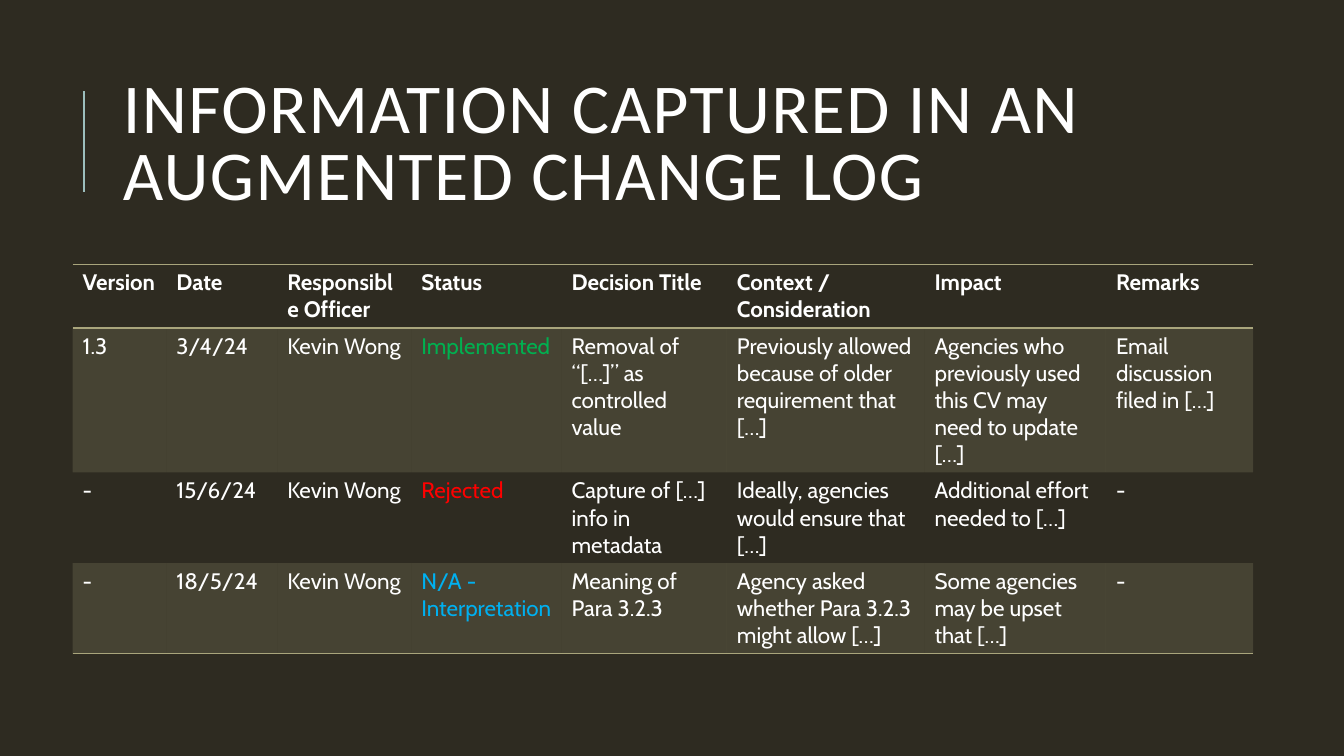
from lxml import etree
from pptx import Presentation
from pptx.dml.color import RGBColor
from pptx.enum.shapes import MSO_CONNECTOR
from pptx.enum.text import MSO_ANCHOR
from pptx.oxml.ns import qn
from pptx.util import Inches, Pt

STRAIGHT = MSO_CONNECTOR.STRAIGHT
MIDDLE = MSO_ANCHOR.MIDDLE
PLAIN_TABLE_STYLE = "{2D5ABB26-0587-4C30-8999-92F81FD0307C}"

BACKGROUND, WHITE, ACCENT, RULE = "2E2B21", "FFFFFF", "9CBEBD", "A9A57C"
BAND_OPACITY = 20
TITLE_FORMAT = {"name": "Calibri", "size": Pt(50), "bold": False}
CELL_FORMAT = {"name": "Cabin", "size": Pt(16), "bold": False}
HEADER_FORMAT = {**CELL_FORMAT, "bold": True}

TITLE = "INFORMATION CAPTURED IN AN AUGMENTED CHANGE LOG"
COLUMN_WIDTHS = [0.93, 1.1, 1.33, 1.49, 1.64, 1.96, 1.8, 1.46]
ROW_HEIGHT = 0.41
STATUS_COLORS = {
    "Implemented": "00B050",
    "Rejected": "FF0000",
    "N/A - Interpretation": "00B0F0",
}
CHANGE_LOG = [
    ["Version", "Date", "Responsible Officer", "Status", "Decision Title",
     "Context / Consideration", "Impact", "Remarks"],
    ["1.3", "3/4/24", "Kevin Wong", "Implemented",
     "Removal of “[…]” as controlled value",
     "Previously allowed because of older requirement that […]",
     "Agencies who previously used this CV may need to update […]",
     "Email discussion filed in […]"],
    ["-", "15/6/24", "Kevin Wong", "Rejected",
     "Capture of […] info in metadata",
     "Ideally, agencies would ensure that […]",
     "Additional effort needed to […]", "-"],
    ["-", "18/5/24", "Kevin Wong", "N/A - Interpretation",
     "Meaning of Para 3.2.3",
     "Agency asked whether Para 3.2.3 might allow […]",
     "Some agencies may be upset that […]", "-"],
]


def paint(color_format, color):
    color_format.rgb = RGBColor.from_string(color)


def write(para, text, font_format, color):
    span = para.add_run()
    span.text = text
    for name, value in font_format.items():
        setattr(span.font, name, value)
    paint(span.font.color, color)
    return span


def add_accent_line(page, x, top, bottom):
    line = page.shapes.add_connector(
        STRAIGHT, Inches(x), Inches(bottom), Inches(x), Inches(top))
    paint(line.line.color, ACCENT)
    line.line.width = Pt(1.5)
    etree.SubElement(line._element.spPr, qn("a:effectLst"))


def add_title(page, text, left, top, width, height):
    box = page.shapes.add_textbox(
        Inches(left), Inches(top), Inches(width), Inches(height))
    frame = box.text_frame
    frame.word_wrap = True
    frame.vertical_anchor = MIDDLE
    para = frame.paragraphs[0]
    para.line_spacing = 0.8
    span = write(para, text, TITLE_FORMAT, WHITE)
    span.font._element.set("spc", "100")  # letter spacing of 1 pt


def add_border(cell, side):
    properties = cell._tc.get_or_add_tcPr()
    border = etree.SubElement(properties, qn("a:ln" + side), w=str(Pt(1)))
    fill = etree.SubElement(border, qn("a:solidFill"))
    etree.SubElement(fill, qn("a:srgbClr"), val=RULE)


def fill_band(cell):
    cell.fill.solid()
    paint(cell.fill.fore_color, RULE)
    color = cell._tc.tcPr.find(f"{qn('a:solidFill')}/{qn('a:srgbClr')}")
    etree.SubElement(color, qn("a:alpha"), val=str(BAND_OPACITY * 1000))


def add_change_log(page, rows, left, top):
    frame = page.shapes.add_table(
        len(rows), len(COLUMN_WIDTHS), Inches(left), Inches(top),
        Inches(sum(COLUMN_WIDTHS)), Inches(ROW_HEIGHT * len(rows)))
    table = frame.table
    table.first_row = table.horz_banding = False
    table._tbl.tblPr.find(qn("a:tableStyleId")).text = PLAIN_TABLE_STYLE
    for column, width in zip(table.columns, COLUMN_WIDTHS):
        column.width = Inches(width)

    last = len(rows) - 1
    for r, texts in enumerate(rows):
        table.rows[r].height = Inches(ROW_HEIGHT)
        font_format = HEADER_FORMAT if r == 0 else CELL_FORMAT
        # Rules frame the header and close the table
        sides = {0: "TB", last: "B"}.get(r, "")
        for c, text in enumerate(texts):
            cell = table.cell(r, c)
            write(cell.text_frame.paragraphs[0], text, font_format,
                  STATUS_COLORS.get(text, WHITE))
            for side in sides:
                add_border(cell, side)
            # Every other body row is tinted
            if r % 2:
                fill_band(cell)
            else:
                cell.fill.background()


def main():
    deck = Presentation()
    deck.slide_width, deck.slide_height = Inches(13.33), Inches(7.5)
    page = deck.slides.add_slide(deck.slide_layouts[6])
    page.background.fill.solid()
    paint(page.background.fill.fore_color, BACKGROUND)

    # Heading
    add_accent_line(page, 0.83, 0.9, 1.9)
    add_title(page, TITLE, 1.12, 0.64, 10.63, 1.64)

    # Change log
    add_change_log(page, CHANGE_LOG, 0.72, 2.62)

    deck.save("out.pptx")


if __name__ == "__main__":
    main()
